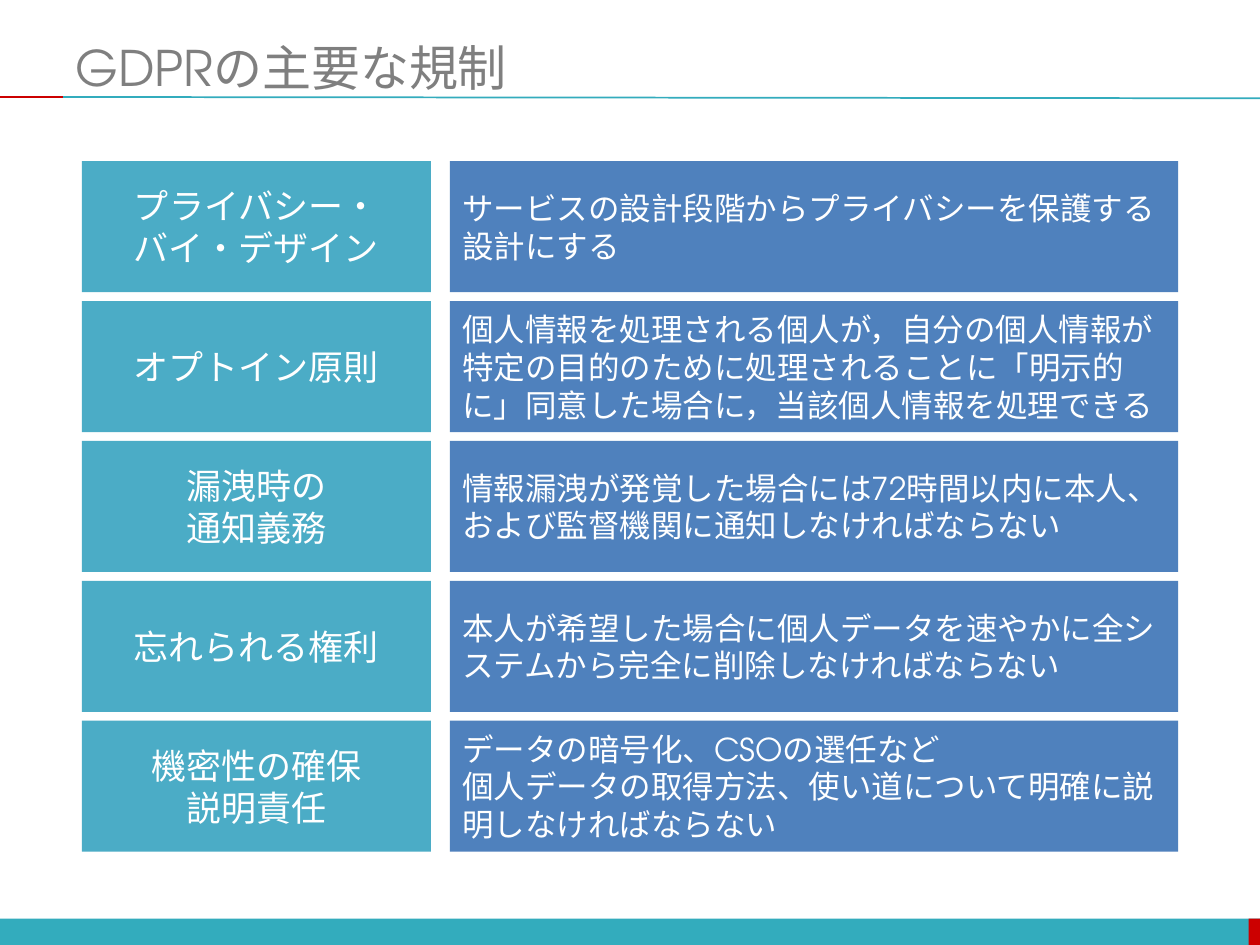
from lxml import etree
from pptx import Presentation
from pptx.dml.color import RGBColor
from pptx.enum import shapes, text
from pptx.oxml import ns
from pptx.util import Inches, Pt

# Content
TITLE = "GDPRの主要な規制"
RULES = [
    (["プライバシー・", "バイ・デザイン"],
     ["サービスの設計段階からプライバシーを保護する設計にする"]),
    (["オプトイン原則"],
     ["個人情報を処理される個人が，自分の個人情報が特定の目的のために処理されることに"
      "「明示的に」同意した場合に，当該個人情報を処理できる"]),
    (["漏洩時の", "通知義務"],
     ["情報漏洩が発覚した場合には72時間以内に本人、および監督機関に通知しなければならない"]),
    (["忘れられる権利"],
     ["本人が希望した場合に個人データを速やかに全システムから完全に削除しなければならない"]),
    (["機密性の確保", "説明責任"],
     ["データの暗号化、CSOの選任など",
      "個人データの取得方法、使い道について明確に説明しなければならない"]),
]

# Theme
THEME = {
    "font": "TeX Gyre Adventor",
    "teal": "33ACBD", "red": "CC0000", "title": "7F7F7F",
    "label": "4BACC6", "detail": "4F81BD", "white": "FFFFFF",
    "title_size": 28, "label_size": 20, "detail_size": 18,
}

# Layout in inches
TOP, ROW_H, ROW_STEP = 1.28, 1.04, 1.11
LABEL_X, LABEL_W = 0.65, 2.77
DETAIL_X, DETAIL_W = 3.57, 5.78
BAR_Y, BAR_H = 7.29, 0.22


def color(name):
    return RGBColor.from_string(THEME[name])


def write(sp, lines, size, ink, align):
    tf = sp.text_frame
    frame = {"word_wrap": True, "auto_size": text.MSO_AUTO_SIZE.NONE,
             "vertical_anchor": text.MSO_ANCHOR.MIDDLE}
    for key, value in frame.items():
        setattr(tf, key, value)
    for i, line in enumerate(lines):
        p = tf.paragraphs[0] if i == 0 else tf.add_paragraph()
        p.alignment = align
        r = p.add_run()
        r.text = line
        for key, value in {"name": THEME["font"], "size": Pt(THEME[size])}.items():
            setattr(r.font, key, value)
        r.font.color.rgb = color(ink)


def add_box(s, x, y, w, h, fill):
    sp = s.shapes.add_shape(shapes.MSO_SHAPE.RECTANGLE, *map(Inches, (x, y, w, h)))
    sp.shadow.inherit = False
    sp.fill.solid()
    sp.fill.fore_color.rgb = color(fill)
    sp.line.fill.background()
    return sp


def add_rule(s, x1, y1, x2, y2, ink):
    line = s.shapes.add_connector(shapes.MSO_CONNECTOR.STRAIGHT,
                                  *map(Inches, (x1, y1, x2, y2)))
    line.line.width = Pt(1)
    line.line.color.rgb = color(ink)
    etree.SubElement(line._element.spPr, ns.qn("a:effectLst"))


def main():
    prs = Presentation()
    prs.slide_width, prs.slide_height = Inches(10), Inches(7.5)
    s = prs.slides.add_slide(prs.slide_layouts[5])

    # Footer bar and rule under the title
    add_box(s, 0, BAR_Y, 10, BAR_H, "teal")
    add_box(s, 9.91, BAR_Y, 0.1, BAR_H, "red")
    add_rule(s, 0.5, 0.77, 10, 0.78, "teal")
    add_rule(s, 0, 0.77, 0.5, 0.77, "red")

    # Title
    title = s.shapes.title
    place = {"left": 0.5, "top": 0.3, "width": 9.5, "height": 0.46}
    for key, value in place.items():
        setattr(title, key, Inches(value))
    write(title, [TITLE], "title_size", "title", text.PP_ALIGN.LEFT)

    # One row per rule: label on the left, detail on the right
    for i, (label, detail) in enumerate(RULES):
        y = TOP + i * ROW_STEP
        sp = add_box(s, LABEL_X, y, LABEL_W, ROW_H, "label")
        write(sp, label, "label_size", "white", text.PP_ALIGN.CENTER)
        sp = add_box(s, DETAIL_X, y, DETAIL_W, ROW_H, "detail")
        write(sp, detail, "detail_size", "white", text.PP_ALIGN.LEFT)

    prs.save("out.pptx")


if __name__ == "__main__":
    main()
